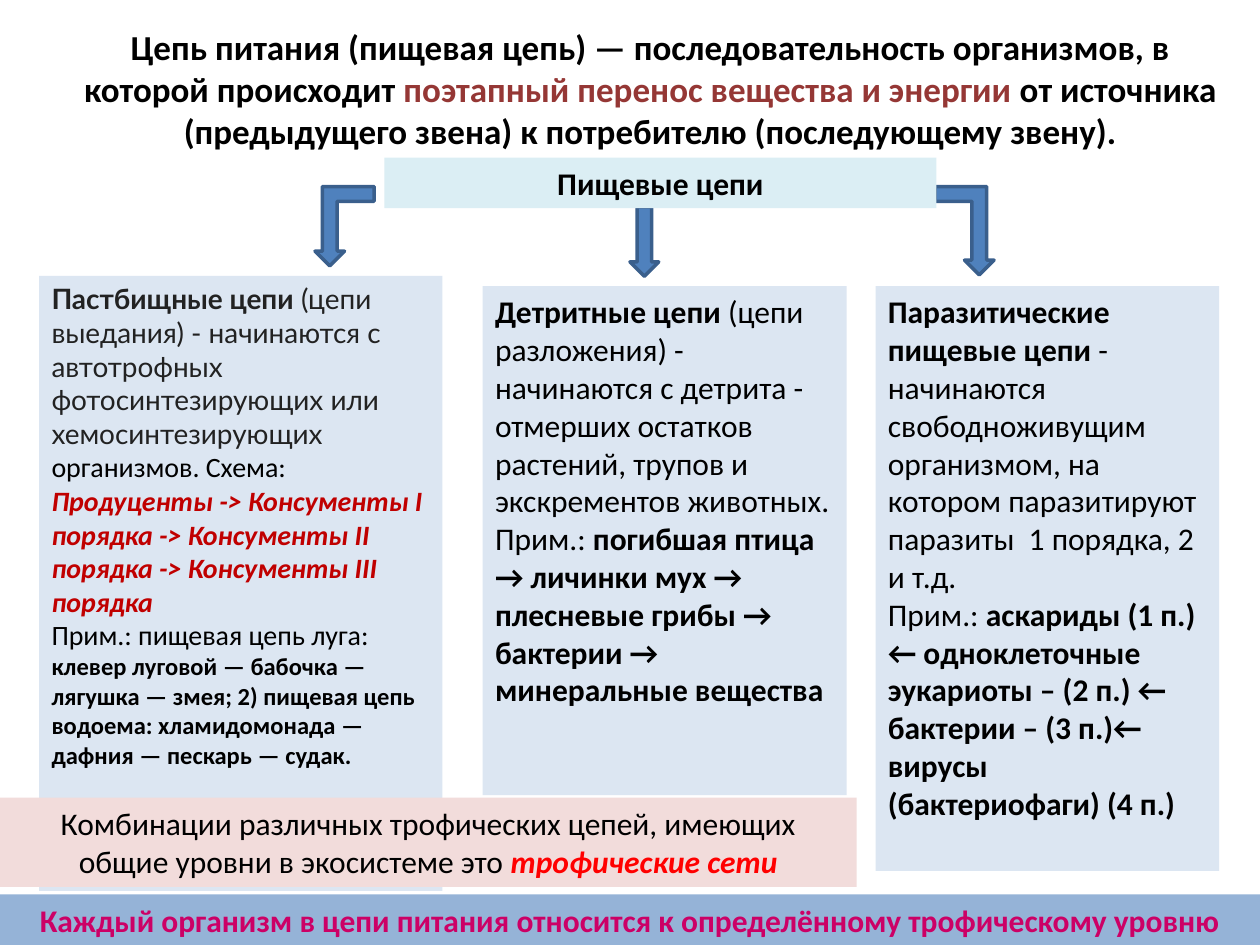
"""Build a slide that explains food chains and their three types."""
from pptx import Presentation
from pptx.dml.color import RGBColor
from pptx.enum.shapes import MSO_SHAPE
from pptx.enum.text import MSO_ANCHOR, PP_ALIGN
from pptx.util import Cm, Pt


def paint(color_format, value):
    color_format.rgb = RGBColor.from_string(value)


def write(frame, paragraphs, align, anchor=MSO_ANCHOR.TOP):
    frame.word_wrap = True
    frame.vertical_anchor = anchor
    for index, runs in enumerate(paragraphs):
        paragraph = frame.add_paragraph() if index else frame.paragraphs[0]
        paragraph.alignment = align
        for text, size, color, style, *font in runs:
            run = paragraph.add_run()
            run.text = text
            run.font.size = Pt(size)
            run.font.name = font[0] if font else "Calibri"
            run.font.bold = "b" in style
            run.font.italic = "i" in style
            paint(run.font.color, color)


BLACK, GREY, COLUMN = "000000", "222222", "DCE6F2"
LEFT, CENTER = PP_ALIGN.LEFT, PP_ALIGN.CENTER

presentation = Presentation()
presentation.slide_width, presentation.slide_height = Cm(25.4), Cm(19.05)
slide = presentation.slides.add_slide(presentation.slide_layouts[6])

definition = slide.shapes.add_textbox(Cm(1.4), Cm(0.58), Cm(23.42), Cm(3.58)).text_frame
definition.margin_bottom = Cm(1.1)
write(definition, [[
    ("Цепь питания (пищевая цепь) — последовательность организмов, в которой происходит ", 20, BLACK, "b"),
    ("поэтапный перенос вещества и энергии ", 20, "953735", "b"),
    ("от источника (предыдущего звена) к потребителю (последующему звену).", 20, BLACK, "b"),
]], CENTER, MSO_ANCHOR.BOTTOM)

branches = [
    (MSO_SHAPE.BENT_UP_ARROW, 18.85, 3.76, 1.19, 1.78, 180, True),
    (MSO_SHAPE.BENT_UP_ARROW, 6.35, 3.76, 1.19, 1.6, 180, False),
    (MSO_SHAPE.DOWN_ARROW, 12.7, 4.17, 0.58, 1.4, 0, False),
]
for preset, left, top, width, height, rotation, mirrored in branches:
    branch = slide.shapes.add_shape(preset, Cm(left), Cm(top), Cm(width), Cm(height))
    branch.shadow.inherit = False
    branch.rotation = rotation
    if mirrored:
        branch.element.spPr.xfrm.set("flipH", "1")
    branch.fill.solid()
    paint(branch.fill.fore_color, "4F81BD")
    paint(branch.line.color, "3A5F8C")
    branch.line.width = Pt(2)

heading = [[("Пищевые цепи", 18, BLACK, "b")]]
grazing = [
    [
        ("Пастбищные цепи", 16, GREY, "b", "Lato"),
        (" (цепи выедания) - начинаются с автотрофных фотосинтезирующих или хемосинтезирующих ",
         16, GREY, "", "Lato"),
        ("организмов. Схема: ", 16, BLACK, ""),
        ("Продуценты -> Консументы I порядка -> Консументы II порядка -> Консументы III порядка",
         16, "C00000", "bi"),
    ],
    [
        ("Прим.: пищевая цепь луга: ", 16, BLACK, ""),
        ("клевер луговой — бабочка — лягушка — змея; 2) пищевая цепь водоема: "
         "хламидомонада — дафния — пескарь — судак.", 14, BLACK, "b"),
    ],
]
detrital = [[
    ("Детритные цепи", 18, BLACK, "b"),
    (" (цепи разложения) - начинаются с детрита - отмерших остатков растений, "
     "трупов и экскрементов животных. Прим.: ", 18, BLACK, ""),
    ("погибшая птица → личинки мух → плесневые грибы → бактерии → минеральные вещества", 18, BLACK, "b"),
]]
parasitic = [
    [
        ("Паразитические пищевые цепи", 18, BLACK, "b"),
        (" - начинаются свободноживущим организмом, на котором паразитируют "
         "паразиты  1 порядка, 2 и т.д.", 18, BLACK, ""),
    ],
    [
        ("Прим.: ", 18, BLACK, ""),
        ("аскариды (1 п.) ← одноклеточные эукариоты – (2 п.) ← бактерии – (3 п.)← "
         "вирусы (бактериофаги) (4 п.)", 18, BLACK, "b"),
    ],
]
conclusion = [[
    ("Каждый организм в цепи питания относится к определённому трофическому уровню", 18, "CC0066", "b"),
]]
networks = [[
    ("Комбинации различных трофических цепей, имеющих общие уровни в экосистеме это ", 18, BLACK, ""),
    ("трофические сети", 18, "FF0000", "bi"),
]]

panels = [
    (7.75, 3.18, 11.13, 1.02, "DBEEF4", CENTER, heading),
    (0.79, 5.56, 8.13, 12.4, COLUMN, LEFT, grazing),
    (9.73, 5.77, 7.34, 10.26, COLUMN, LEFT, detrital),
    (17.65, 5.77, 6.93, 11.79, COLUMN, LEFT, parasitic),
    (0, 18.03, 25.4, 1.02, "95B3D7", CENTER, conclusion),
    (0, 16.08, 17.27, 1.8, "F2DCDB", CENTER, networks),
]
for left, top, width, height, color, align, paragraphs in panels:
    panel = slide.shapes.add_shape(MSO_SHAPE.RECTANGLE, Cm(left), Cm(top), Cm(width), Cm(height))
    panel.shadow.inherit = False
    panel.fill.solid()
    paint(panel.fill.fore_color, color)
    panel.line.fill.background()
    write(panel.text_frame, paragraphs, align)

presentation.save("out.pptx")
